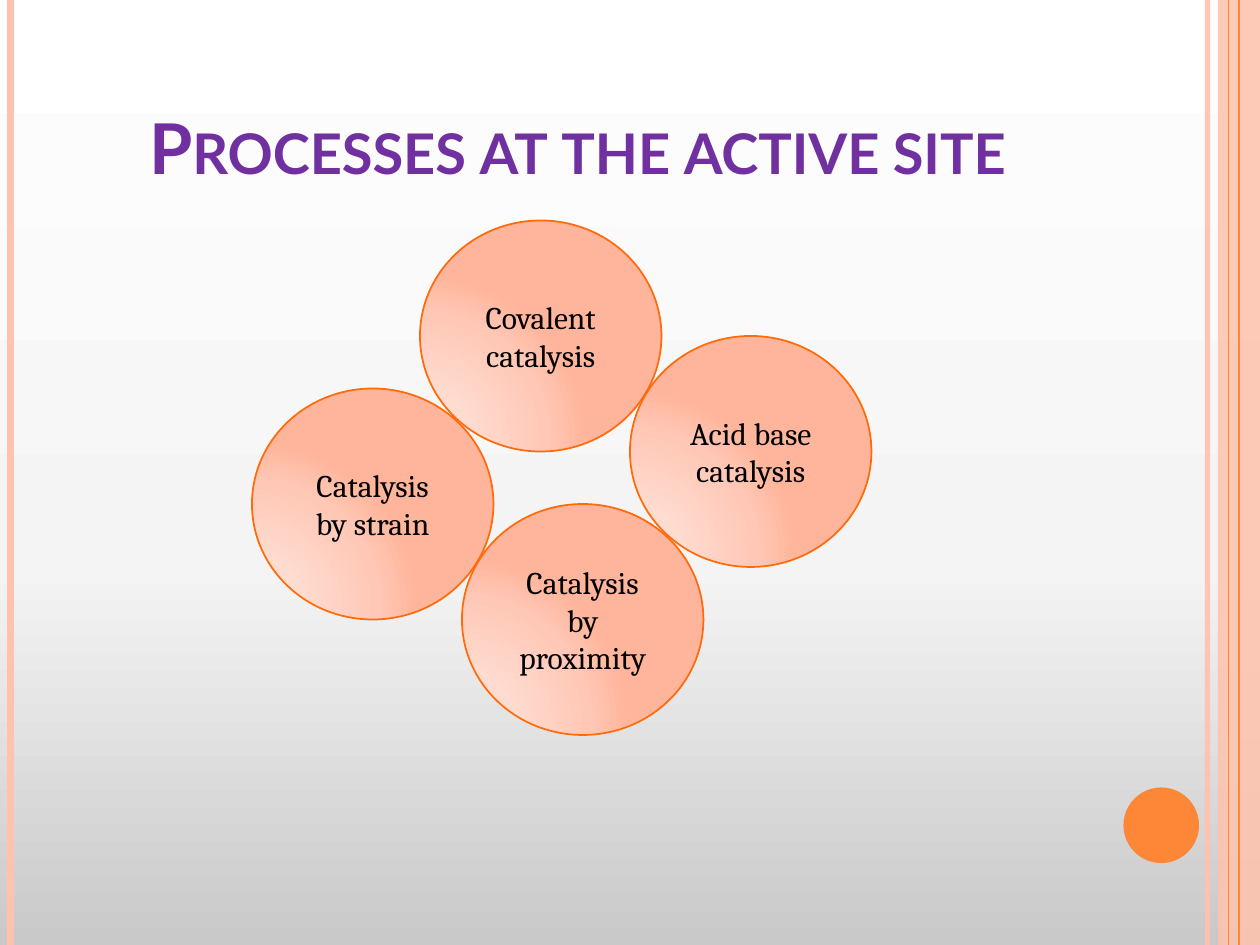
from lxml import etree
from pptx import Presentation
from pptx.dml.color import RGBColor
from pptx.enum.shapes import MSO_CONNECTOR, MSO_SHAPE
from pptx.enum.text import MSO_ANCHOR, MSO_AUTO_SIZE, PP_ALIGN
from pptx.oxml import parse_xml
from pptx.oxml.ns import nsdecls, qn
from pptx.util import Inches, Pt

COLORS = {
    "peach": "FEC3AE", "orange": "FE8637", "outline": "FF6B0A",
    "title": "7030A0", "text": "000000",
}
BACKDROP_STOPS = [(0, "C9C9C9"), (40, "F4F4F4"), (100, "FFFFFF")]
CIRCLE_STOPS = [(0, "FFDED5"), (30, "FFDBD0"), (75, "FFC8B6"), (100, "FFB59B")]
RGB = {name: RGBColor.from_string(value) for name, value in COLORS.items()}


def set_gradient(fill, root, stops, direction):
    """Give a fill its colour stops and its linear or circular direction."""
    fill.gradient()
    old = next(root.iter(qn("a:gradFill")))
    stop_xml = "".join(
        f'<a:gs pos="{pos * 1000}"><a:srgbClr val="{color}"/></a:gs>' for pos, color in stops)
    old.getparent().replace(old, parse_xml(
        f'<a:gradFill {nsdecls("a")} rotWithShape="1"><a:gsLst>{stop_xml}</a:gsLst>'
        f'{direction}</a:gradFill>'))


def set_opacity(root, percent):
    color = next(root.iter(qn("a:srgbClr")))
    etree.SubElement(color, qn("a:alpha")).set("val", str(percent * 1000))


prs = Presentation()
prs.slide_width, prs.slide_height = Inches(10), Inches(7.5)
# Grid of 120 columns by 90 rows
COL, ROW = prs.slide_width / 120, prs.slide_height / 90
slide = prs.slides.add_slide(prs.slide_layouts[5])
shapes = slide.shapes

# Backdrop, dark at the foot
background = slide.background
set_gradient(background.fill, slide.element, BACKDROP_STOPS,
             '<a:lin ang="16200000" scaled="0"/>')

# Side band and corner dot
for kind, color, opacity, (left, top, width, height) in [
    (MSO_SHAPE.RECTANGLE, "peach", 87, (116, 0, 4, 90)),
    (MSO_SHAPE.OVAL, "orange", 100, (107, 75, 7.2, 7.2)),
]:
    ornament = shapes.add_shape(kind, int(left * COL), int(top * ROW),
                                int(width * COL), int(height * ROW))
    ornament.shadow.inherit = False
    ornament.fill.solid()
    ornament.fill.fore_color.rgb = RGB[color]
    ornament.line.fill.background()
    if opacity < 100:
        set_opacity(ornament.fill._xPr, opacity)

# Vertical rules along both edges
for column, color, weight, opacity in [
    (115, "peach", 3, 93), (1, "peach", 4.5, 100),
    (118, "orange", 1.5, 100), (117, "orange", 0.75, 100),
]:
    x = int(column * COL)
    rule = shapes.add_connector(MSO_CONNECTOR.STRAIGHT, x, 0, x, prs.slide_height)
    rule.line.color.rgb = RGB[color]
    rule.line.width = Pt(weight)
    if opacity < 100:
        set_opacity(rule.line._get_or_add_ln(), opacity)
    etree.SubElement(rule._element.spPr, qn("a:effectLst"))

# Title
heading = shapes.title
for name, value in {"left": 6 * COL, "top": 3.6 * ROW,
                    "width": 98 * COL, "height": 15 * ROW}.items():
    setattr(heading, name, int(value))
heading.text_frame.text = "Processes at the active site"
heading.text_frame.auto_size = MSO_AUTO_SIZE.NONE
heading.text_frame.vertical_anchor = MSO_ANCHOR.BOTTOM
heading_line = heading.text_frame.paragraphs[0]
heading_line.alignment = PP_ALIGN.CENTER
heading_run = heading_line.runs[0]
for name, value in {"name": "Lato", "size": Pt(40), "bold": True}.items():
    setattr(heading_run.font, name, value)
heading_run.font.color.rgb = RGB["title"]
heading_run._r.get_or_add_rPr().set("cap", "small")

# Four touching circles, one per process
for process, column, row in [
    ("Covalent catalysis", 40, 21),
    ("Acid base catalysis", 60, 32),
    ("Catalysis by strain", 24, 37),
    ("Catalysis by proximity", 44, 48),
]:
    circle = shapes.add_shape(MSO_SHAPE.FLOWCHART_CONNECTOR, int(column * COL),
                              int(row * ROW), int(23 * COL), int(22 * ROW))
    circle.shadow.inherit = False
    set_gradient(circle.fill, circle._element, CIRCLE_STOPS,
                 '<a:path path="circle">'
                 '<a:fillToRect l="5000" t="100000" r="120000" b="10000"/></a:path>')
    circle.line.color.rgb = RGB["outline"]
    circle.line.width = Pt(1)
    circle.text_frame.text = process
    circle.text_frame.word_wrap = True
    circle.text_frame.vertical_anchor = MSO_ANCHOR.MIDDLE
    label = circle.text_frame.paragraphs[0]
    label.alignment = PP_ALIGN.CENTER
    for name, value in {"name": "Cambria", "size": Pt(18)}.items():
        setattr(label.runs[0].font, name, value)
    label.runs[0].font.color.rgb = RGB["text"]

prs.save("out.pptx")
